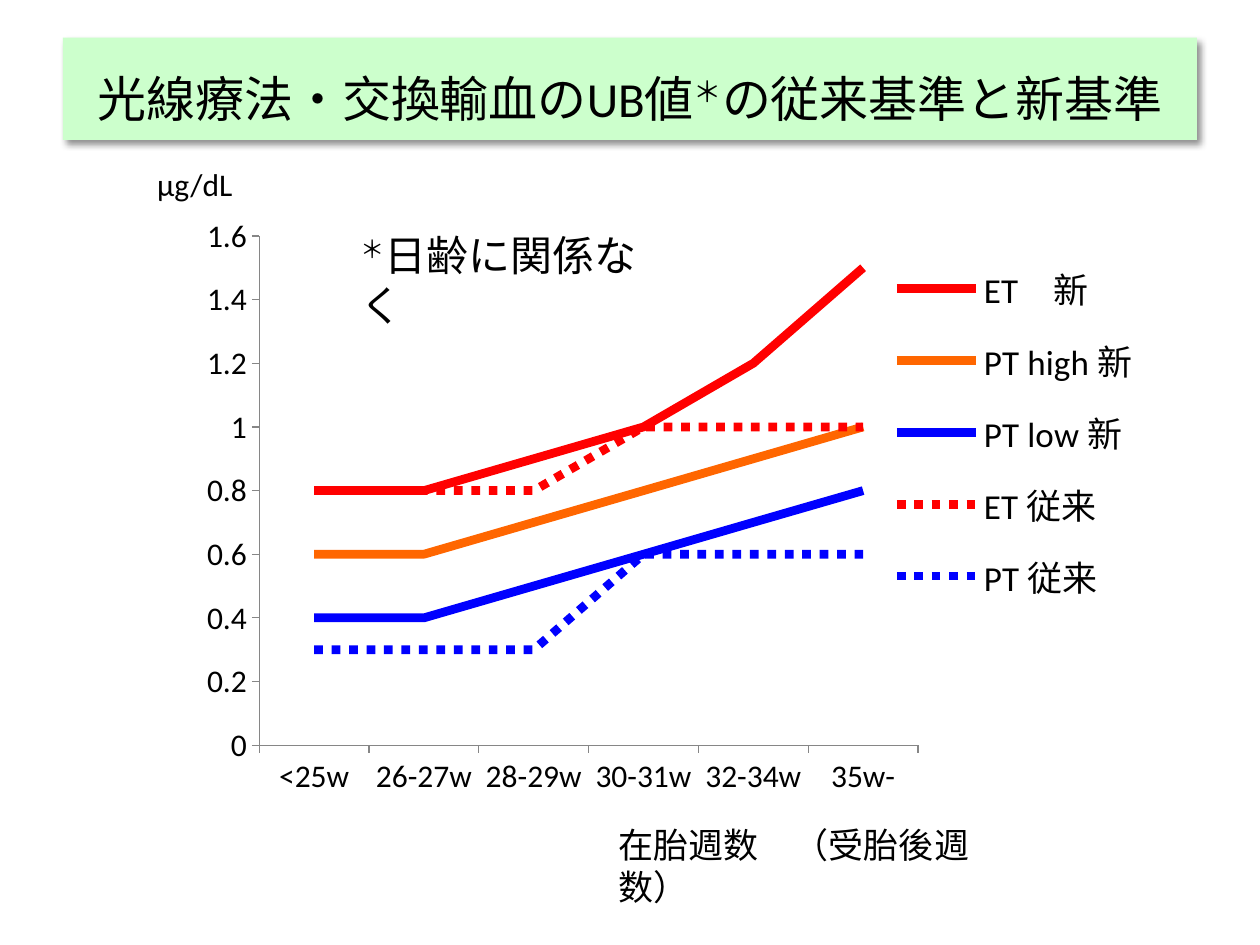
from lxml.etree import SubElement
from pptx import Presentation
from pptx.chart.data import CategoryChartData
from pptx.dml.color import RGBColor
from pptx.enum.chart import XL_CHART_TYPE, XL_LEGEND_POSITION, XL_MARKER_STYLE, XL_TICK_MARK
from pptx.enum.dml import MSO_LINE
from pptx.enum.shapes import MSO_SHAPE
from pptx.enum.text import MSO_ANCHOR, PP_ALIGN
from pptx.oxml.ns import qn
from pptx.util import Cm, Pt

# Content: a text is a list of (words, superscript) spans
TITLE = [("光線療法・交換輸血のUB値", False), ("＊", True), ("の従来基準と新基準", False)]
NOTES = [  # left, top, width, height in cm; size; wrap; spans
    ((2.92, 3.2, 2.06, 1.02), 18, False, [("μg/dL", False)]),
    ((12.22, 16.48, 8.1, 1.12), 20, True, [("在胎週数　（受胎後週数）", False)]),
    ((7.01, 4.5, 6.58, 1.27), 24, True, [("＊", True), ("日齢に関係なく", False)]),
]
WEEKS = ["<25w", "26-27w", "28-29w", "30-31w", "32-34w", "35w-"]
CRITERIA = [  # name, values, colour, dash
    ("ET　新", (0.8, 0.8, 0.9, 1, 1.2, 1.5), "FF0000", MSO_LINE.SOLID),
    ("PT high 新", (0.6, 0.6, 0.7, 0.8, 0.9, 1), "FF6600", MSO_LINE.SOLID),
    ("PT low 新", (0.4, 0.4, 0.5, 0.6, 0.7, 0.8), "0000FF", MSO_LINE.SOLID),
    ("ET 従来", (0.8, 0.8, 0.8, 1, 1, 1), "FF0000", MSO_LINE.ROUND_DOT),
    ("PT 従来", (0.3, 0.3, 0.3, 0.6, 0.6, 0.6), "0000FF", MSO_LINE.ROUND_DOT),
]
TITLE_BOX = (1.27, 0.76, 22.86, 2.06)
CHART_BOX = (3.86, 4.14, 19.53, 12.37)
PLOT_AREA = (0.07, 0.05, 0.68, 0.83)
LEGEND_AREA = (0.71, 0.06, 0.28, 0.62)


def colour(value):
    return RGBColor.from_string(value)


def place(box):
    return [Cm(length) for length in box]


def apply(target, formats):
    for name, value in formats.items():
        setattr(target, name, value)


def set_font(font, size):
    apply(font, {"name": "Calibri", "size": Pt(size), "bold": False})
    font.color.rgb = colour("000000")


def write(para, spans, size):
    for words, raised in spans:
        span = para.add_run()
        span.text = words
        set_font(span.font, size)
        if raised:
            span.font._element.set("baseline", "30000")


def add_shadow(shape):
    effects = shape._element.spPr.find(qn("a:effectLst"))
    shadow = SubElement(effects, qn("a:outerShdw"), blurRad=str(Pt(4)), dist=str(Pt(3)),
                        dir="2700000", algn="tl", rotWithShape="0")
    black = SubElement(shadow, qn("a:srgbClr"), val="000000")
    SubElement(black, qn("a:alpha"), val="43000")


def set_layout(part, area, inner=False):
    layout = part.find(qn("c:layout"))
    if layout is None:
        layout = part.makeelement(qn("c:layout"))
        # The layout comes first in a plot area, after the position in a legend
        part.insert(0 if inner else 1, layout)
    manual = SubElement(layout, qn("c:manualLayout"))
    if inner:
        SubElement(manual, qn("c:layoutTarget"), val="inner")
    for tag in ("xMode", "yMode"):
        SubElement(manual, qn("c:" + tag), val="edge")
    for tag, value in zip("xywh", area):
        SubElement(manual, qn("c:" + tag), val=str(value))


def add_title(page):
    box = page.shapes.add_shape(MSO_SHAPE.RECTANGLE, *place(TITLE_BOX))
    box.shadow.inherit = False
    box.fill.solid()
    box.fill.fore_color.rgb = colour("CCFFCC")
    box.line.fill.background()
    add_shadow(box)
    apply(box.text_frame, {"vertical_anchor": MSO_ANCHOR.MIDDLE, "word_wrap": True})
    para = box.text_frame.paragraphs[0]
    apply(para, {"alignment": PP_ALIGN.CENTER, "line_spacing": 1.3})
    write(para, TITLE, 28)


def add_criteria_chart(page):
    data = CategoryChartData()
    data.categories = WEEKS
    for name, values, *_ in CRITERIA:
        data.add_series(name, values)
    chart = page.shapes.add_chart(XL_CHART_TYPE.LINE, *place(CHART_BOX), data).chart
    set_font(chart.font, 18)
    apply(chart, {"has_title": False, "has_legend": True})
    apply(chart.legend, {"position": XL_LEGEND_POSITION.RIGHT, "include_in_layout": False})
    set_font(chart.legend.font, 20)
    set_layout(chart.legend._element, LEGEND_AREA)
    set_layout(chart._chartSpace.chart.plotArea, PLOT_AREA, inner=True)

    # Axes
    for axis in (chart.category_axis, chart.value_axis):
        apply(axis, {"has_major_gridlines": False, "major_tick_mark": XL_TICK_MARK.OUTSIDE})
        axis.format.line.color.rgb = colour("868686")
        axis.format.line.width = Pt(0.75)
        set_font(axis.tick_labels.font, 18)
    apply(chart.value_axis, {"minimum_scale": 0, "maximum_scale": 1.6, "major_unit": 0.2})
    apply(chart.value_axis.tick_labels, {"number_format": "General",
                                         "number_format_is_linked": False})

    # Lines
    chart.plots[0].vary_by_categories = False
    for series, (_, _, shade, dash) in zip(chart.plots[0].series, CRITERIA):
        series.smooth = False
        series.marker.style = XL_MARKER_STYLE.NONE
        series.format.line.color.rgb = colour(shade)
        apply(series.format.line, {"width": Pt(5), "dash_style": dash})


def add_notes(page):
    for area, size, wrap, spans in NOTES:
        box = page.shapes.add_textbox(*place(area))
        box.text_frame.word_wrap = wrap
        write(box.text_frame.paragraphs[0], spans, size)


def main():
    deck = Presentation()
    apply(deck, {"slide_width": Cm(25.4), "slide_height": Cm(19.05)})
    page = deck.slides.add_slide(deck.slide_layouts[6])
    add_title(page)
    add_criteria_chart(page)
    add_notes(page)
    deck.save("out.pptx")


if __name__ == "__main__":
    main()
